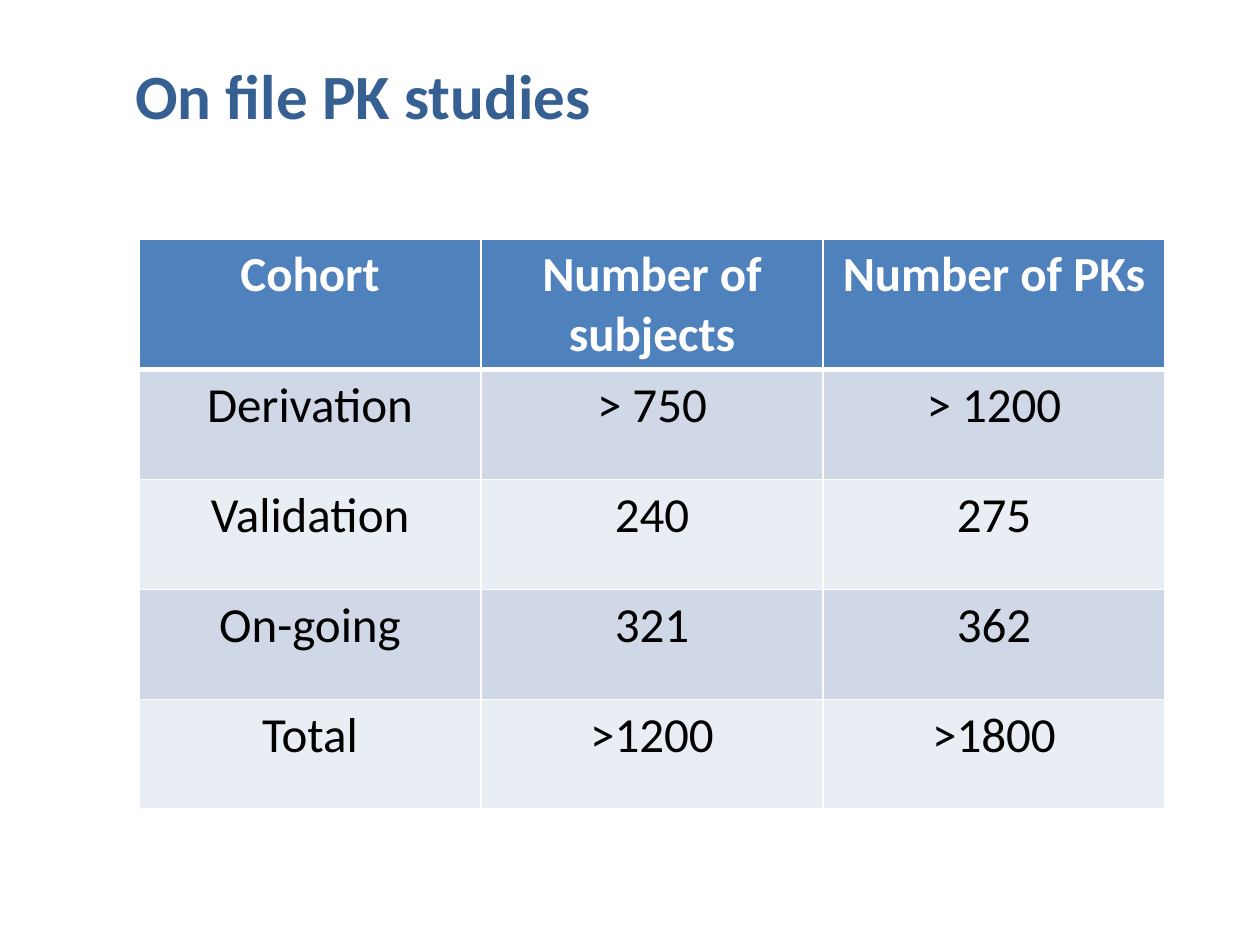
from lxml.etree import SubElement
from pptx import Presentation
from pptx.dml.color import RGBColor
from pptx.enum.text import MSO_ANCHOR as Anchor, PP_ALIGN as Align
from pptx.oxml.ns import qn
from pptx.util import Pt

EMU_PER_PX = 914400 / 126
COLORS = {
    "title": "376092",
    "header": "4F81BD",
    "odd": "D0D8E8",
    "even": "E9EDF4",
    "white": "FFFFFF",
    "black": "000000",
}
TITLE_FORMAT = {"name": "Calibri", "size": Pt(36), "bold": True}
HEADER_FORMAT = {"name": "Calibri", "size": Pt(28), "bold": True}
BODY_FORMAT = {**HEADER_FORMAT, "bold": False}
STUDIES = [
    ("Cohort", "Number of subjects", "Number of PKs"),
    ("Derivation", "> 750", "> 1200"),
    ("Validation", "240", "275"),
    ("On-going", "321", "362"),
    ("Total", ">1200", ">1800"),
]


def px(length):
    """Turn px into EMU."""
    return round(length * EMU_PER_PX)


def write(frame, text, font_format, color, align):
    """Write one formatted paragraph into a text frame."""
    paragraph = frame.paragraphs[0]
    paragraph.alignment = align
    run = paragraph.add_run()
    run.text = text
    for key, value in font_format.items():
        setattr(run.font, key, value)
    run.font.color.rgb = RGBColor.from_string(COLORS[color])


def rule_cell(cell, bottom_width):
    """Draw white borders on a cell, before its fill is set."""
    properties = cell._tc.get_or_add_tcPr()
    widths = {"lnL": 1, "lnR": 1, "lnT": 1, "lnB": bottom_width}
    for side, width in widths.items():
        line = SubElement(properties, qn(f"a:{side}"), w=str(Pt(width)))
        fill = SubElement(line, qn("a:solidFill"))
        SubElement(fill, qn("a:srgbClr"), val=COLORS["white"])


def add_title(slide, box, text):
    """Place the bottom-anchored slide title."""
    frame = slide.shapes.add_textbox(*map(px, box)).text_frame
    frame.word_wrap = True
    frame.vertical_anchor = Anchor.BOTTOM
    write(frame, text, TITLE_FORMAT, "title", Align.LEFT)


def add_studies(slide, box, rows):
    """Place the table of studies with a header and banded rows."""
    table = slide.shapes.add_table(len(rows), len(rows[0]), *map(px, box)).table
    for r, row in enumerate(rows):
        header = r == 0
        band = "header" if header else "odd" if r % 2 else "even"
        for c, text in enumerate(row):
            cell = table.cell(r, c)
            rule_cell(cell, 3 if r == 0 else 1)
            if r == 1:
                top = cell._tc.tcPr.find(qn("a:lnT"))
                top.set("w", str(Pt(3)))
            cell.fill.solid()
            cell.fill.fore_color.rgb = RGBColor.from_string(COLORS[band])
            write(cell.text_frame, text,
                  HEADER_FORMAT if header else BODY_FORMAT,
                  "white" if header else "black", Align.CENTER)


def main():
    """Build and save the slide."""
    deck = Presentation()
    deck.slide_width, deck.slide_height = px(1260), px(945)
    slide = deck.slides.add_slide(deck.slide_layouts[6])
    add_title(slide, (123, 49, 1134, 89), "On file PK studies")
    add_studies(slide, (139, 239, 1026, 550), STUDIES)
    deck.save("out.pptx")


if __name__ == "__main__":
    main()
